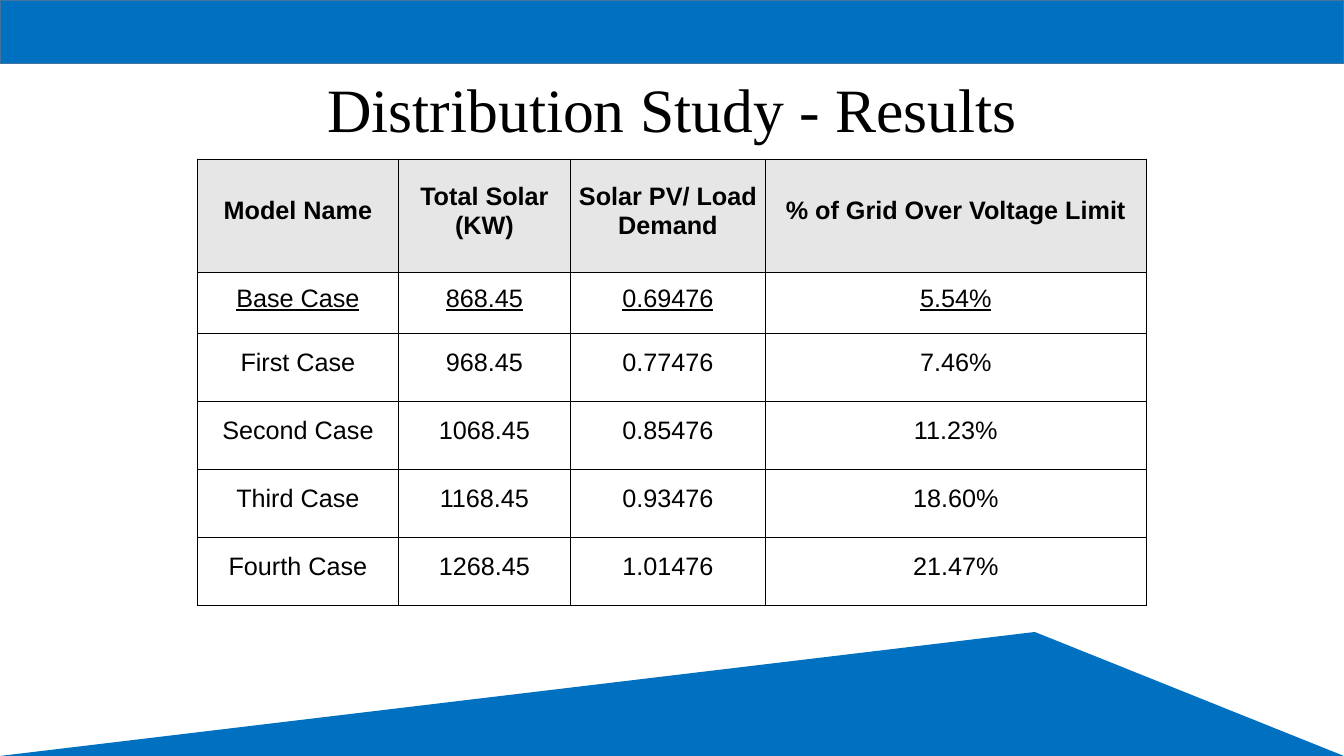
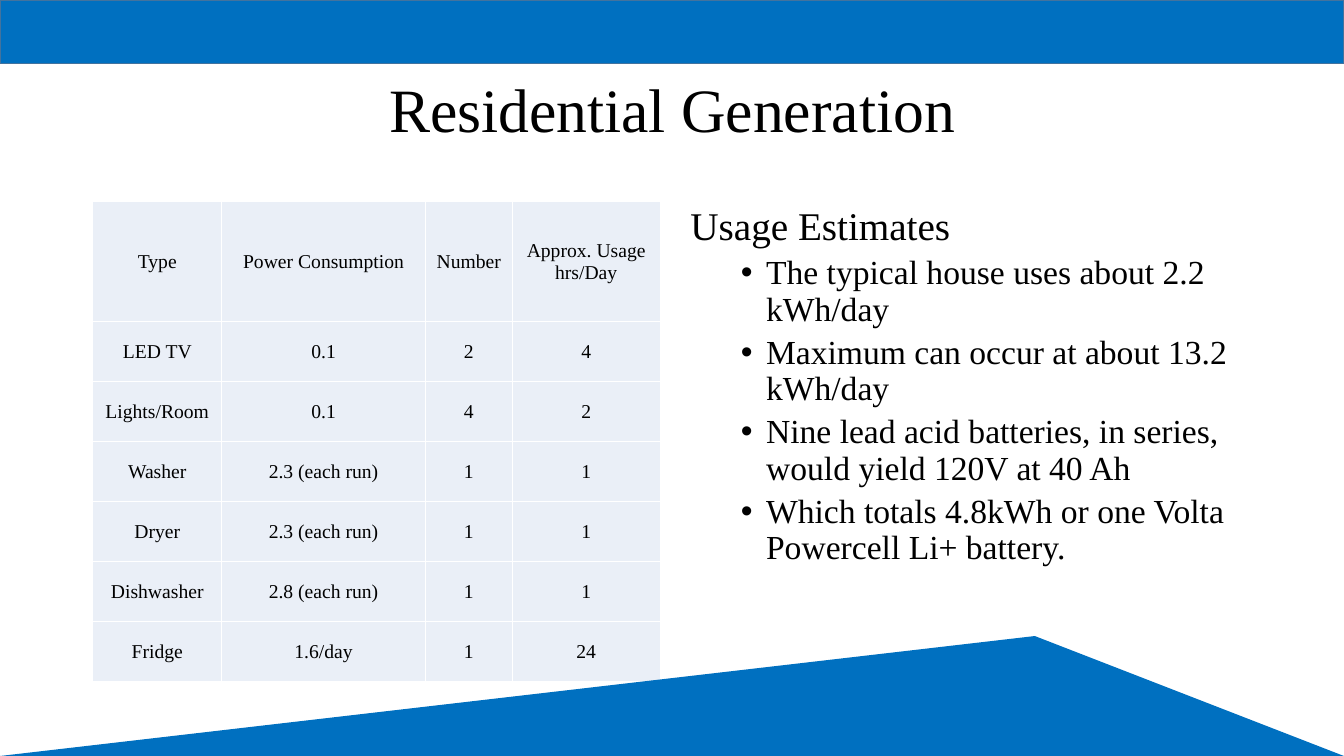
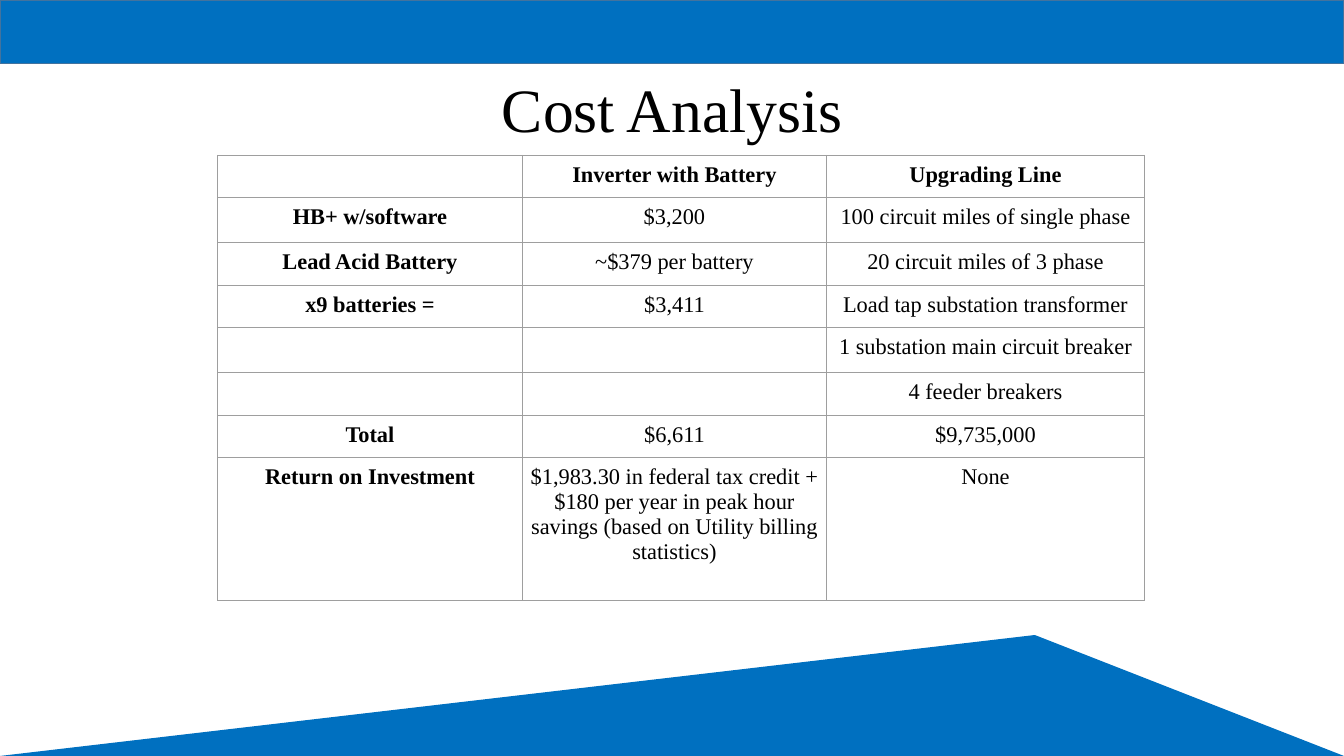
from lxml.etree import SubElement
from pptx import Presentation
from pptx.dml.color import RGBColor
from pptx.enum.shapes import MSO_SHAPE
from pptx.enum.text import MSO_ANCHOR, PP_ALIGN
from pptx.oxml.ns import qn
from pptx.util import Inches, Pt

COLORS = {
    "brand": "0070C0",
    "band_edge": "43739E",
    "text": "000000",
    "white": "FFFFFF",
    "header": "E7E6E6",
    "pale_blue": "EAEFF7",
    "grid": "9E9E9E",
}
SERIF = "Times New Roman"
SANS = "Arial"
WIDTH, HEIGHT = 13.33, 7.5

RESULTS = [
    ["Model Name", "Total Solar (KW)", "Solar PV/ Load Demand", "% of Grid Over Voltage Limit"],
    ["Base Case", "868.45", "0.69476", "5.54%"],
    ["First Case", "968.45", "0.77476", "7.46%"],
    ["Second Case", "1068.45", "0.85476", "11.23%"],
    ["Third Case", "1168.45", "0.93476", "18.60%"],
    ["Fourth Case", "1268.45", "1.01476", "21.47%"],
]
APPLIANCES = [
    ["Type", "Power Consumption", "Number", "Approx. Usage hrs/Day"],
    ["LED TV", "0.1", "2", "4"],
    ["Lights/Room", "0.1", "4", "2"],
    ["Washer", "2.3 (each run)", "1", "1"],
    ["Dryer", "2.3 (each run)", "1", "1"],
    ["Dishwasher", "2.8 (each run)", "1", "1"],
    ["Fridge", "1.6/day", "1", "24"],
]
ESTIMATES = [
    "The typical house uses about 2.2 kWh/day",
    "Maximum can occur at about 13.2 kWh/day",
    "Nine lead acid batteries, in series, would yield 120V at 40 Ah",
    "Which totals 4.8kWh or one Volta Powercell Li+ battery.",
]
COSTS = [
    ["", "Inverter with Battery", "Upgrading Line"],
    ["HB+ w/software", "$3,200", "100 circuit miles of single phase"],
    ["Lead Acid Battery", "~$379 per battery", "20 circuit miles of 3 phase"],
    ["x9 batteries =", "$3,411", "Load tap substation transformer"],
    ["", "", "1 substation main circuit breaker"],
    ["", "", "4 feeder breakers"],
    ["Total", "$6,611", "$9,735,000"],
    ["Return on Investment",
     "$1,983.30 in federal tax credit + $180 per year in peak hour savings "
     "(based on Utility billing statistics)", "None"],
]


def rgb(name):
    return RGBColor.from_string(COLORS[name])


def add_run(paragraph, text, size, font=SERIF, bold=False, underline=False):
    run = paragraph.add_run()
    run.text = text
    run.font.size = Pt(size)
    run.font.name = font
    run.font.bold = bold
    run.font.underline = underline
    run.font.color.rgb = rgb("text")


def add_band(slide, preset, top, height, edge=None):
    band = slide.shapes.add_shape(preset, 0, Inches(top), Inches(WIDTH), Inches(height))
    band.shadow.inherit = False
    band.fill.solid()
    band.fill.fore_color.rgb = rgb("brand")
    if edge:
        band.line.color.rgb = rgb(edge)
        band.line.width = Pt(1)
    else:
        band.line.fill.background()
    return band


def add_bands(slide, peak_top):
    add_band(slide, MSO_SHAPE.RECTANGLE, 0, 0.63, "band_edge")
    peak = add_band(slide, MSO_SHAPE.ISOSCELES_TRIANGLE, peak_top, HEIGHT - peak_top)
    peak.adjustments[0] = 0.77


def add_text_frame(slide, left, top, width, height):
    frame = slide.shapes.add_textbox(
        Inches(left), Inches(top), Inches(width), Inches(height)).text_frame
    frame.word_wrap = True
    return frame


def add_title(slide, text):
    frame = add_text_frame(slide, 0.92, 0.39, 11.5, 1.45)
    frame.vertical_anchor = MSO_ANCHOR.MIDDLE
    title = frame.paragraphs[0]
    title.alignment = PP_ALIGN.CENTER
    title.line_spacing = 0.9
    add_run(title, text, 44)


def add_bullet(paragraph):
    props = paragraph._p.get_or_add_pPr()
    props.set("marL", str(Inches(0.75)))
    props.set("indent", str(Inches(-0.25)))
    SubElement(props, qn("a:buFont"), typeface="Arial")
    SubElement(props, qn("a:buChar"), char="•")


def add_estimates(slide, heading, bullets):
    frame = add_text_frame(slide, 6.75, 2, 5.67, 3.75)
    paragraph = frame.paragraphs[0]
    paragraph.line_spacing = 0.9
    paragraph.space_before = Pt(10)
    add_run(paragraph, heading, 28)
    for text in bullets:
        paragraph = frame.add_paragraph()
        paragraph.line_spacing = 0.9
        paragraph.space_before = Pt(5)
        add_bullet(paragraph)
        add_run(paragraph, text, 24)


def set_borders(cell, color, width):
    props = cell._tc.get_or_add_tcPr()
    for side in ("a:lnL", "a:lnR", "a:lnT", "a:lnB"):
        line = SubElement(props, qn(side), w=str(Pt(width)))
        fill = SubElement(line, qn("a:solidFill"))
        SubElement(fill, qn("a:srgbClr"), val=COLORS[color])


def add_grid(slide, left, top, columns, heights, rows, border, border_width,
             margins, anchor, style):
    """style(row, column) gives the cell's fill and its run formatting."""
    table = slide.shapes.add_table(
        len(rows), len(columns), Inches(left), Inches(top),
        Inches(sum(columns)), Inches(sum(heights))).table
    table.first_row = table.horz_banding = False
    for column, width in zip(table.columns, columns):
        column.width = Inches(width)
    for r, (texts, height) in enumerate(zip(rows, heights)):
        table.rows[r].height = Inches(height)
        for c, text in enumerate(texts):
            cell = table.cell(r, c)
            fill, run_format = style(r, c)
            set_borders(cell, border, border_width)
            if fill:
                cell.fill.solid()
                cell.fill.fore_color.rgb = rgb(fill)
            else:
                cell.fill.background()
            if not text:
                continue
            cell.vertical_anchor = anchor
            (cell.margin_left, cell.margin_top,
             cell.margin_right, cell.margin_bottom) = map(Inches, margins)
            paragraph = cell.text_frame.paragraphs[0]
            paragraph.alignment = PP_ALIGN.CENTER
            add_run(paragraph, text, **run_format)


# Cell styles of the three tables
def results_style(row, column):
    return ("white" if row else "header",
            dict(size=18, font=SANS, bold=row == 0, underline=row == 1))


def appliance_style(row, column):
    return "pale_blue", dict(size=14)


def cost_style(row, column):
    return None, dict(size=16, bold=row == 0 or column == 0)


def main():
    deck = Presentation()
    deck.slide_width, deck.slide_height = Inches(WIDTH), Inches(HEIGHT)
    blank = deck.slide_layouts[6]

    # Distribution study
    study = deck.slides.add_slide(blank)
    add_title(study, "Distribution Study - Results")
    add_grid(study, 1.96, 1.58, [1.99, 1.71, 1.93, 3.78], [1.12, 0.61] + [2.7 / 4] * 4,
             RESULTS, "text", 1, (0.01, 0.01, 0.01, 0.1), MSO_ANCHOR.MIDDLE, results_style)
    add_bands(study, 6.27)

    # Residential generation
    residential = deck.slides.add_slide(blank)
    add_title(residential, "Residential Generation")
    add_grid(residential, 0.92, 2, [1.28, 2.02, 0.86, 1.47], [1.19] + [1.19 / 2] * 6,
             APPLIANCES, "white", 1, (0.01, 0.01, 0.01, 0), MSO_ANCHOR.MIDDLE, appliance_style)
    add_estimates(residential, "Usage Estimates", ESTIMATES)
    add_bands(residential, 6.31)

    # Cost analysis
    cost = deck.slides.add_slide(blank)
    add_title(cost, "Cost Analysis")
    add_grid(cost, 2.16, 1.54, [3.02, 3.02, 3.15],
             [0.42, 0.45, 0.42, 0.42, 0.45, 0.42, 0.42, 1.42],
             COSTS, "grid", 0.75, (0.07,) * 4, MSO_ANCHOR.TOP, cost_style)
    add_bands(cost, 6.3)

    deck.save("out.pptx")


if __name__ == "__main__":
    main()
